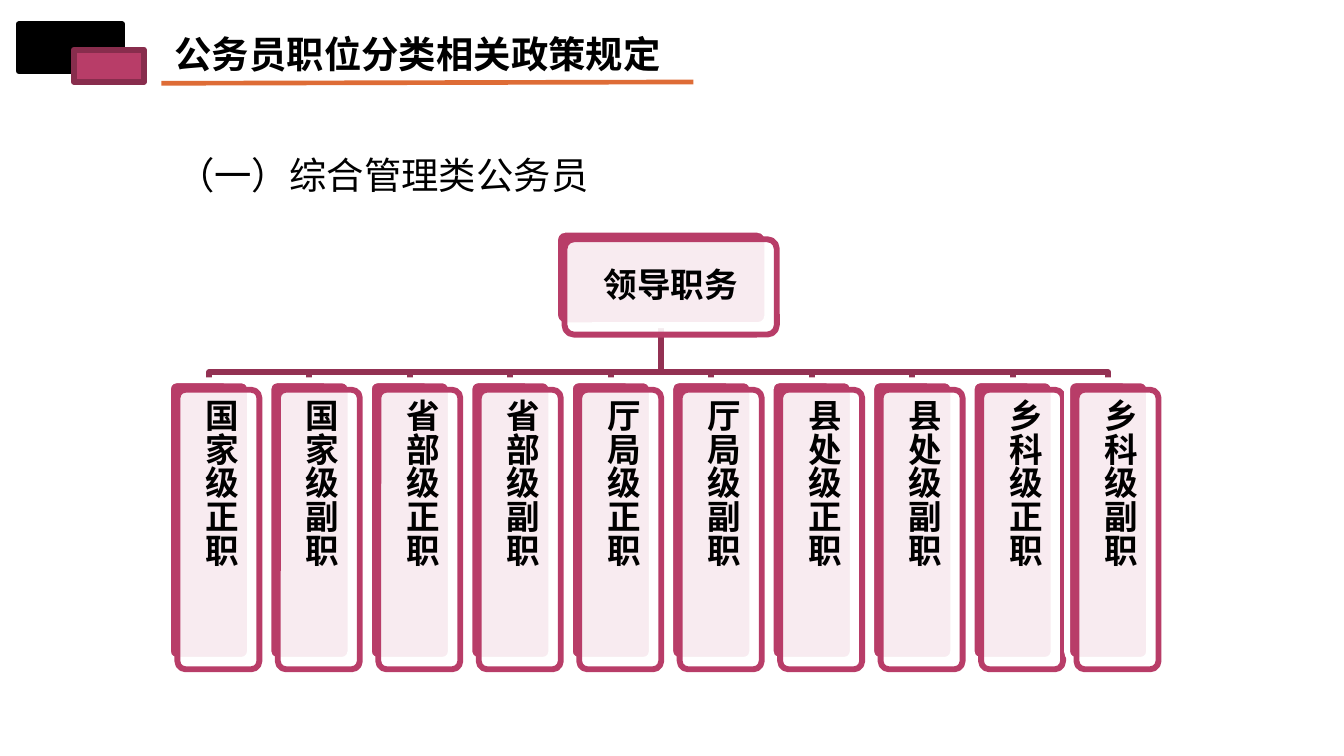
import pptx
import pptx.dml.color
import pptx.enum.shapes
import pptx.enum.text
import pptx.oxml
import pptx.oxml.ns
import pptx.util
from pptx.util import Inches

RGBColor = pptx.dml.color.RGBColor
BLACK = RGBColor(0x00, 0x00, 0x00)
WHITE = RGBColor(0xFF, 0xFF, 0xFF)
ROSE = RGBColor(0xB8, 0x3D, 0x68)
DARK_ROSE = RGBColor(0x88, 0x2D, 0x4D)
BRANCH_ROSE = RGBColor(0x93, 0x31, 0x53)
ORANGE = RGBColor(0xDE, 0x6C, 0x36)

HEADING_FONT = "Noto Sans CJK SC"
BODY_FONT = "Arial"
OUTLINE = 3.15
CARD_OFFSET = 0.07
RECTANGLE = pptx.enum.shapes.MSO_SHAPE.RECTANGLE
ROUNDED = pptx.enum.shapes.MSO_SHAPE.ROUNDED_RECTANGLE

LEVELS = ["国家级", "省部级", "厅局级", "县处级", "乡科级"]
POSTS = [level + rank for level in LEVELS for rank in ("正职", "副职")]
ROOT = (4.13, 1.71, 1.58, 0.71)
POST_TOP, POST_WIDTH, POST_HEIGHT = 2.83, 0.61, 2.08
FIRST_LEFT, NINTH_LEFT, LAST_LEFT = 1.25, 7.23, 7.94
BRANCH_Y = 2.77


def add_xml(parent, tag, **attributes):
    element = pptx.oxml.parse_xml(f"<a:{tag} {pptx.oxml.ns.nsdecls('a')}/>")
    for name, value in attributes.items():
        element.set(name, str(value))
    parent.append(element)


def add_block(page, kind, area, fill, line):
    block = page.shapes.add_shape(kind, *map(Inches, area))
    block.shadow.inherit = False
    block.fill.solid()
    block.fill.fore_color.rgb = fill
    block.line.color.rgb = line
    block.line.width = pptx.util.Pt(OUTLINE)
    if kind == ROUNDED:
        block.adjustments[0] = 0.1
    return block


def add_text(page, area, text, size, font=HEADING_FONT, bold=True):
    box = page.shapes.add_textbox(*map(Inches, area))
    box.text_frame.word_wrap = True
    para = box.text_frame.paragraphs[0]
    para.text = text
    para.font.size = pptx.util.Pt(size)
    para.font.name = font
    para.font.bold = bold
    para.font.color.rgb = BLACK
    return box


def add_heading(page, area, text, **style):
    frame = add_text(page, area, text, 20, **style).text_frame
    frame.auto_size = pptx.enum.text.MSO_AUTO_SIZE.SHAPE_TO_FIT_TEXT


def add_underline(page):
    line = page.shapes.add_connector(
        pptx.enum.shapes.MSO_CONNECTOR.STRAIGHT,
        Inches(1.2), Inches(0.62), Inches(5.16), Inches(0.61))
    line.line.color.rgb = ORANGE
    line.line.width = pptx.util.Pt(2.5)
    add_xml(line._element.spPr, "effectLst")


def add_branch(page, end_x):
    """Draw an elbow from the root card down to one post."""
    left, top, width, height = ROOT
    start_x = left + width / 2
    builder = page.shapes.build_freeform(Inches(start_x), Inches(top + height))
    corners = [(start_x, BRANCH_Y), (end_x, BRANCH_Y), (end_x, POST_TOP)]
    builder.add_line_segments([(Inches(x), Inches(y)) for x, y in corners], close=False)
    branch = builder.convert_to_shape()
    branch.shadow.inherit = False
    branch.fill.background()
    branch.line.color.rgb = BRANCH_ROSE
    branch.line.width = pptx.util.Pt(OUTLINE)


def add_card(page, area, text, vertical=False):
    """Draw a solid card, a translucent one shifted over it, and its label."""
    left, top, width, height = area
    front_area = (left + CARD_OFFSET, top + CARD_OFFSET, width, height)
    add_block(page, ROUNDED, area, ROSE, WHITE)
    front = add_block(page, ROUNDED, front_area, WHITE, ROSE)
    color = front._element.spPr.find(".//" + pptx.oxml.ns.qn("a:srgbClr"))
    add_xml(color, "alpha", val=90000)

    frame = add_text(page, front_area, text, 18).text_frame
    frame.vertical_anchor = pptx.enum.text.MSO_ANCHOR.MIDDLE
    frame.margin_left = frame.margin_right = Inches(0.07)
    frame.margin_top = frame.margin_bottom = Inches(0.07)
    if vertical:
        frame._txBody.bodyPr.set("vert", "eaVert")
    para = frame.paragraphs[0]
    para.alignment = pptx.enum.text.PP_ALIGN.CENTER
    para.line_spacing = 0.9
    para.space_after = pptx.util.Pt(0)
    spacing = para._p.pPr.find(pptx.oxml.ns.qn("a:spcAft"))
    spacing.remove(spacing[0])
    add_xml(spacing, "spcPct", val=35000)


def main():
    deck = pptx.Presentation()
    deck.slide_width = Inches(10)
    deck.slide_height = Inches(10) * 9 // 16
    page = deck.slides.add_slide(deck.slide_layouts[6])

    add_block(page, RECTANGLE, (0.14, 0.18, 0.77, 0.35), BLACK, BLACK)
    add_block(page, RECTANGLE, (0.55, 0.37, 0.52, 0.24), ROSE, DARK_ROSE)
    add_underline(page)
    add_heading(page, (1.2, 0.18, 4.39, 0.44), "公务员职位分类相关政策规定")
    add_heading(page, (1.22, 1.08, 5.12, 0.44), "（一）综合管理类公务员",
                font=BODY_FONT, bold=False)

    pitch = (NINTH_LEFT - FIRST_LEFT) / 8
    lefts = [FIRST_LEFT + pitch * column for column in range(9)] + [LAST_LEFT]
    for left in reversed(lefts):
        add_branch(page, left + POST_WIDTH / 2)
    add_card(page, ROOT, "领导职务")
    for left, post in zip(lefts, POSTS):
        add_card(page, (left, POST_TOP, POST_WIDTH, POST_HEIGHT), post, vertical=True)

    deck.save("out.pptx")


if __name__ == "__main__":
    main()
